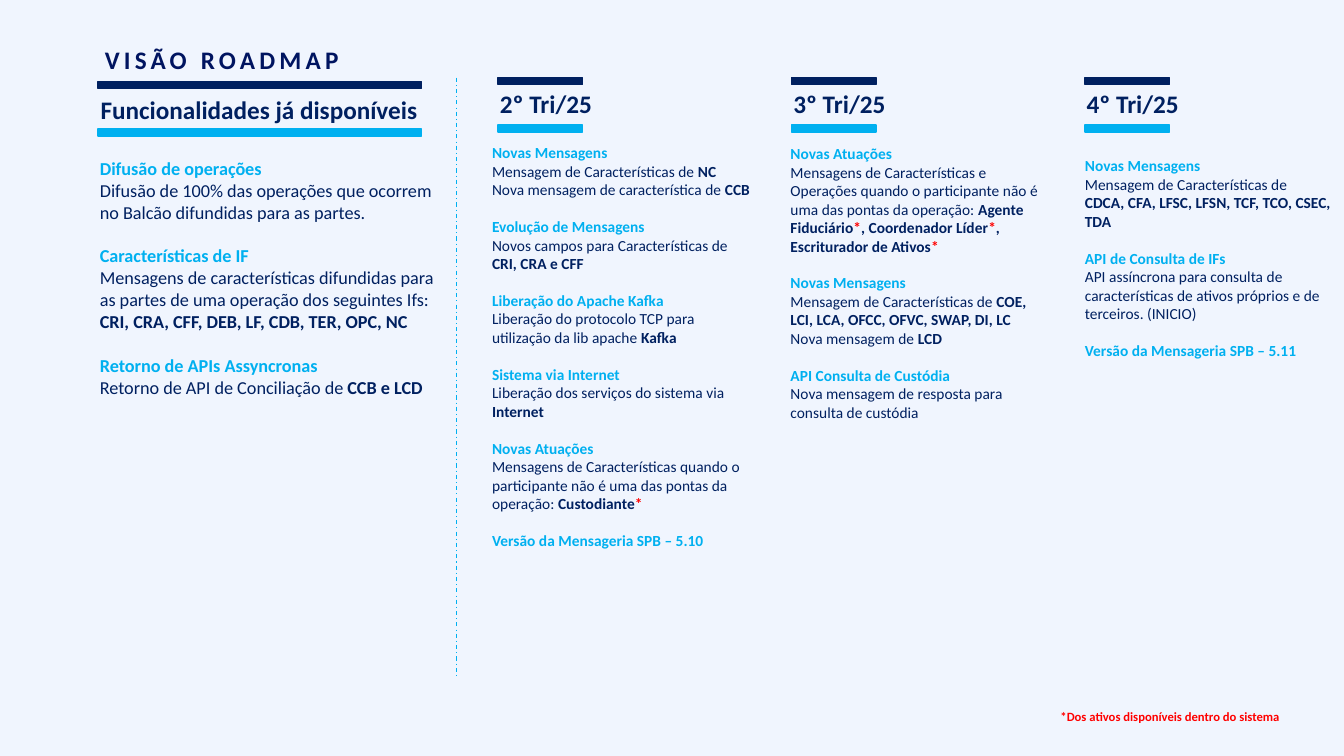
"""Builds the roadmap slide with available features and three coming quarters."""
from dataclasses import dataclass

from lxml.etree import SubElement
from pptx import Presentation
from pptx.dml.color import RGBColor
from pptx.enum.dml import MSO_LINE
from pptx.enum.shapes import MSO_CONNECTOR, MSO_SHAPE
from pptx.enum.text import MSO_ANCHOR, MSO_AUTO_SIZE, PP_ALIGN
from pptx.oxml.ns import qn
from pptx.util import Emu, Pt


@dataclass(frozen=True)
class Theme:
    """Holds the colours, font and type sizes."""
    font: str = "Calibri"
    back: str = "F0F5FE"
    title: str = "001460"
    navy: str = "002060"
    sky: str = "00B0F0"
    red: str = "FF0000"
    heading_pt: int = 18
    available_pt: int = 13
    quarter_pt: int = 11
    note_pt: int = 9
    line_height: float = 1.2


def px(n):
    """Turns px, 100 to the inch, into EMU."""
    return Emu(n * 9144)


class RoadmapSlide:
    """Draws styled elements on the current slide."""

    def __init__(self, prs, theme):
        """Adds a slide with a title and four body placeholders."""
        self.t = theme
        self.s = prs.slides.add_slide(prs.slide_layouts.get_by_name("Comparison"))
        fill = self.s.background.fill
        fill.solid()
        fill.fore_color.rgb = RGBColor.from_string(theme.back)

    def place(self, sp, box):
        """Moves a text shape and prepares its frame."""
        sp.left, sp.top, sp.width, sp.height = map(px, box)
        tf = sp.text_frame
        tf.word_wrap = True
        tf.auto_size = MSO_AUTO_SIZE.NONE
        tf.vertical_anchor = MSO_ANCHOR.TOP
        return tf

    def style(self, r, size, color, bold=True):
        """Formats one run."""
        r.font.name = self.t.font
        r.font.size = Pt(size)
        r.font.bold = bold
        r.font.color.rgb = RGBColor.from_string(color)

    def title(self, text, box):
        """Fills the title placeholder with letterspaced text."""
        tf = self.place(self.s.shapes.title, box)
        tf.text = text
        p = tf.paragraphs[0]
        p.alignment = PP_ALIGN.LEFT
        r = p.runs[0]
        self.style(r, self.t.heading_pt, self.t.title)
        r.font._element.set("spc", "300")

    def label(self, text, box, size, color, align=PP_ALIGN.LEFT):
        """Adds a single bold line of text."""
        tf = self.place(self.s.shapes.add_textbox(0, 0, 0, 0), box)
        tf.text = text
        p = tf.paragraphs[0]
        p.alignment = align
        self.style(p.runs[0], size, color)

    def bar(self, x, y, w, color):
        """Adds a thin horizontal bar."""
        sp = self.s.shapes.add_shape(MSO_SHAPE.RECTANGLE, px(x), px(y), px(w), px(7))
        sp.shadow.inherit = False
        sp.fill.solid()
        sp.fill.fore_color.rgb = sp.line.color.rgb = RGBColor.from_string(color)
        sp.line.width = Pt(1)

    def header(self, text, x, y, w, box, align=PP_ALIGN.LEFT):
        """Adds a heading between a navy and a sky bar."""
        self.bar(x, y, w, self.t.navy)
        self.bar(x, y + 47, w, self.t.sky)
        self.label(text, box, self.t.heading_pt, self.t.navy, align)

    def divider(self, x, top, bottom):
        """Adds a dashed vertical line."""
        c = self.s.shapes.add_connector(MSO_CONNECTOR.STRAIGHT, px(x), px(top), px(x), px(bottom))
        c.line.color.rgb = RGBColor.from_string(self.t.sky)
        c.line.width = Pt(0.75)
        c.line.dash_style = MSO_LINE.DASH_DOT
        SubElement(c._element.spPr, qn("a:effectLst"))

    def topics(self, idx, box, size, items):
        """Fills a body placeholder: strings are topics, tuples are details."""
        tf = self.place(self.s.placeholders[idx], box)
        for i, item in enumerate(items):
            p = tf.add_paragraph() if i else tf.paragraphs[0]
            is_topic = isinstance(item, str)
            pPr = p._p.get_or_add_pPr()
            pPr.set("marL", "0")
            pPr.set("indent", "0")
            SubElement(pPr, qn("a:buNone"))
            p.alignment = PP_ALIGN.LEFT
            p.space_before = Pt(round(size * self.t.line_height, 1) if is_topic and i else 0)
            if is_topic:
                p.text = item
                self.style(p.runs[0], size, self.t.sky)
                continue
            for n, text in enumerate(item):
                if text:
                    r = p.add_run()
                    r.text = text
                    self.style(r, size, self.t.red if text == "*" else self.t.navy, n > 0)


AVAILABLE = [
    "Difusão de operações",
    ("Difusão de 100% das operações que ocorrem no Balcão difundidas para as partes.",),
    "Características de IF",
    ("Mensagens de características difundidas para as partes de uma operação dos seguintes Ifs:",),
    ("", "CRI, CRA, CFF, DEB, LF, CDB, TER, OPC, NC"),
    "Retorno de APIs Assyncronas",
    ("Retorno de API de Conciliação de ", "CCB e LCD"),
]
QUARTERS = [
    ("2º Tri/25", (478, 137, 277, 417), [
        "Novas Mensagens",
        ("Mensagem de Características de ", "NC"),
        ("Nova mensagem de característica de ", "CCB"),
        "Evolução de Mensagens",
        ("Novos campos para Características de ", "CRI, CRA e CFF"),
        "Liberação do Apache Kafka",
        ("Liberação do protocolo TCP para utilização da lib apache ", "Kafka"),
        "Sistema via Internet",
        ("Liberação dos serviços do sistema via ", "Internet"),
        "Novas Atuações",
        ("Mensagens de Características quando o participante não é uma das pontas da operação: ",
         "Custodiante", "*"),
        "Versão da Mensageria SPB – 5.10",
    ]),
    ("3º Tri/25", (774, 138, 272, 325), [
        "Novas Atuações",
        ("Mensagens de Características e Operações quando o participante não é uma das pontas "
         "da operação: ", "Agente Fiduciário", "*", ", Coordenador Líder", "*",
         ", Escriturador de Ativos", "*"),
        "Novas Mensagens",
        ("Mensagem de Características de ", "COE, LCI, LCA, OFCC, OFVC, SWAP, DI, LC"),
        ("Nova mensagem de ", "LCD"),
        "API Consulta de Custódia",
        ("Nova mensagem de resposta para consulta de custódia",),
    ]),
    ("4º Tri/25", (1066, 150, 267, 325), [
        "Novas Mensagens",
        ("Mensagem de Características de",),
        ("", "CDCA, CFA, LFSC, LFSN, TCF, TCO, CSEC, TDA"),
        "API de Consulta de IFs",
        ("API assíncrona para consulta de características de ativos próprios e de terceiros. (INICIO)",),
        "Versão da Mensageria SPB – 5.11",
    ]),
]


def main():
    """Builds and saves the slide."""
    prs = Presentation()
    prs.slide_width, prs.slide_height = px(1333), px(750)
    t = Theme()
    s = RoadmapSlide(prs, t)
    s.title("VISÃO ROADMAP", (94, 39, 573, 40))
    s.header("Funcionalidades já disponíveis", 97, 81, 321, (82, 89, 350, 40), PP_ALIGN.CENTER)
    s.topics(1, (89, 151, 367, 360), t.available_pt, AVAILABLE)
    s.divider(453, 77, 672)
    for i, (name, box, items) in enumerate(QUARTERS):
        x = 494 + 291 * i
        s.header(name, x, 77, 84, (x - 8, 83, 120, 40))
        s.topics(i + 2, box, t.quarter_pt, items)
    s.label("*Dos ativos disponíveis dentro do sistema", (1042, 698, 277, 25), t.note_pt, t.red)
    prs.save("out.pptx")


if __name__ == "__main__":
    main()
